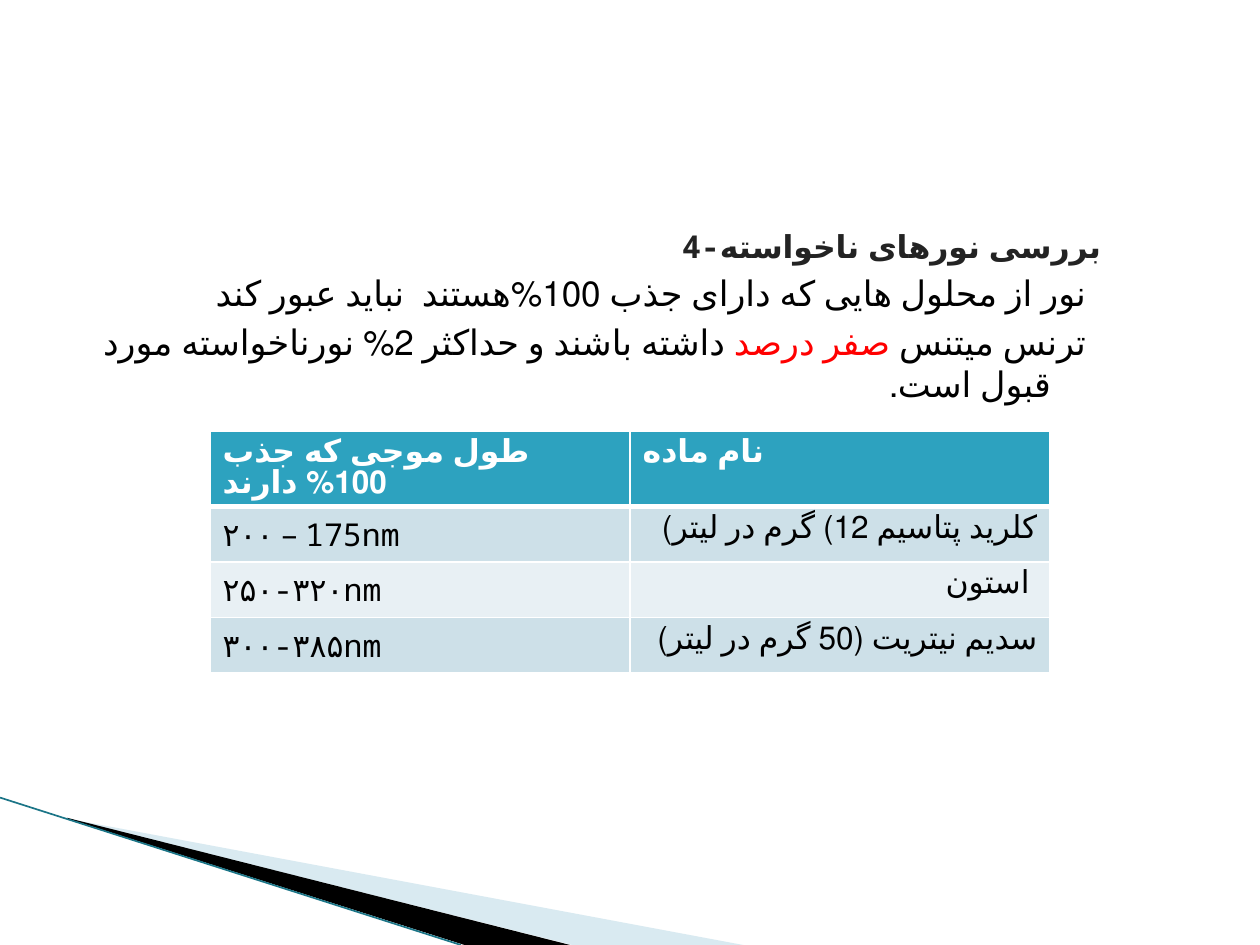
from collections import namedtuple

from lxml import etree
from pptx import Presentation
from pptx import util as u
from pptx.dml.color import RGBColor
from pptx.enum import lang, shapes, text
from pptx.oxml import ns

FONT = "Noto Sans Mono"
Box = namedtuple("Box", "left top width height")


def share(box, left, top, width=0, height=0):
    """Part of a box, given in percent of its size."""
    return Box(round(box.left + box.width * left / 100),
               round(box.top + box.height * top / 100),
               round(box.width * width / 100),
               round(box.height * height / 100))


def colour(value):
    return RGBColor.from_string(value)


def add_element(parent, tag, **values):
    return etree.SubElement(parent, ns.qn(tag), values)


def add_span(para, words, shade, **formats):
    span = para.add_run()
    span.text = words
    base = {"name": FONT, "bold": False,
            "language_id": lang.MSO_LANGUAGE_ID.FARSI}
    for name, value in {**base, **formats}.items():
        setattr(span.font, name, value)
    span.font.color.rgb = colour(shade)


def set_direction(para, right=True, rtl=False):
    para.alignment = text.PP_ALIGN.RIGHT if right else text.PP_ALIGN.LEFT
    if rtl:
        para._p.get_or_add_pPr().set("rtl", "1")


def add_wedge(page, box, points, fill, alpha=None):
    corners = [share(box, *point)[:2] for point in points]
    builder = page.shapes.build_freeform(*corners[0], scale=1.0)
    builder.add_line_segments(corners[1:], close=True)
    wedge = builder.convert_to_shape()
    wedge.shadow.inherit = False
    wedge.fill.solid()
    wedge.fill.fore_color.rgb = colour(fill)
    wedge.line.fill.background()
    if alpha:
        shade = wedge._element.spPr.find(".//" + ns.qn("a:srgbClr"))
        add_element(shade, "a:alpha", val=str(alpha * 1000))


def draw_corner(page, box):
    """Wedges and thin line at the bottom left."""
    add_wedge(page, box, [(9.3, 14.5), (100, 100), (77, 100)], "A0CBDC", 40)
    add_wedge(page, box, [(9, 13.7), (76.7, 100), (62.5, 100), (9.2, 14.5)],
              "000000")
    start, end = share(box, 0, 0), share(box, 62, 100)
    edge = page.shapes.add_connector(shapes.MSO_CONNECTOR.STRAIGHT,
                                     *start[:2], *end[:2])
    edge.line.color.rgb = colour("1B7587")
    edge.line.width = u.Pt(0.95)
    add_element(edge._element.spPr, "a:effectLst")


def write_body(page, box, paragraphs):
    """Heading and right-to-left text in the body placeholder."""
    body = page.placeholders[1]
    page.shapes._spTree.append(body._element)
    for name, value in box._asdict().items():
        setattr(body, name, value)
    frame = body.text_frame
    frame.auto_size = text.MSO_AUTO_SIZE.NONE
    for index, (rtl, spans) in enumerate(paragraphs):
        para = frame.add_paragraph() if index else frame.paragraphs[0]
        set_direction(para, rtl=rtl)
        settings = para._p.get_or_add_pPr()
        settings.set("marL", str(u.Inches(0.4)))
        settings.set("indent", str(u.Inches(-0.28)))
        add_element(settings, "a:buNone")
        para.space_before = u.Pt(4 if index else 0)
        for words, shade, formats in spans:
            add_span(para, words, shade, **formats)


def set_borders(cell, bottom):
    settings = cell._tc.get_or_add_tcPr()
    for index, side in enumerate("LRTB"):
        width = u.Pt(bottom if side == "B" else 1)
        line = add_element(settings, f"a:ln{side}", w=str(width))
        fill = add_element(line, "a:solidFill")
        add_element(fill, "a:srgbClr", val="FFFFFF")
        settings.insert(index, line)


def draw_table(page, box, rows):
    """Header row and banded rows; rtl None means a left-aligned cell."""
    table = page.shapes.add_table(len(rows), len(rows[0]), *box).table
    for r, row in enumerate(rows):
        band = "2DA2BF" if r == 0 else ("E8F0F4", "CDE0E8")[r % 2]
        for c, (words, rtl) in enumerate(row):
            cell = table.cell(r, c)
            cell.fill.solid()
            cell.fill.fore_color.rgb = colour(band)
            set_borders(cell, 1 if r else 3)
            para = cell.text_frame.paragraphs[0]
            set_direction(para, rtl is not None, rtl)
            add_span(para, words, "000000" if r else "FFFFFF",
                     size=u.Pt(18), bold=r == 0)


def main():
    deck = Presentation()
    deck.slide_width, deck.slide_height = u.Inches(10), u.Inches(7.5)
    whole = Box(0, 0, deck.slide_width, deck.slide_height)
    page = deck.slides.add_slide(deck.slide_layouts[1])
    title = page.shapes.title._element
    title.getparent().remove(title)

    draw_corner(page, share(whole, 0, 84.4, 59, 15.6))

    large = {"size": u.Pt(20)}
    write_body(page, share(whole, 6.7, 23.33, 81.7, 66), [
        (False, [("4-بررسی نورهای ناخواسته", "232323",
                  {"size": u.Pt(18), "bold": True})]),
        (True, [("نور از محلول هایی که دارای جذب 100%هستند  نباید عبور کند",
                 "000000", large)]),
        (True, [("ترنس میتنس ", "000000", large),
                ("صفر درصد ", "FF0000", large),
                ("داشته باشند و حداکثر 2% نورناخواسته مورد قبول است.",
                 "000000", large)]),
    ])

    draw_table(page, share(whole, 16.67, 45.6, 66.67, 21.6), [
        [("طول موجی که جذب 100% دارند", None), ("نام ماده", None)],
        [("۲۰۰ – 175nm", None), ("کلرید پتاسیم 12) گرم در لیتر) ", True)],
        [("۲۵۰-۳۲۰nm", None), ("استون ", False)],
        [("۳۰۰-۳۸۵nm", None), ("سدیم نیتریت (50 گرم در لیتر) ", True)],
    ])
    deck.save("out.pptx")


if __name__ == "__main__":
    main()
